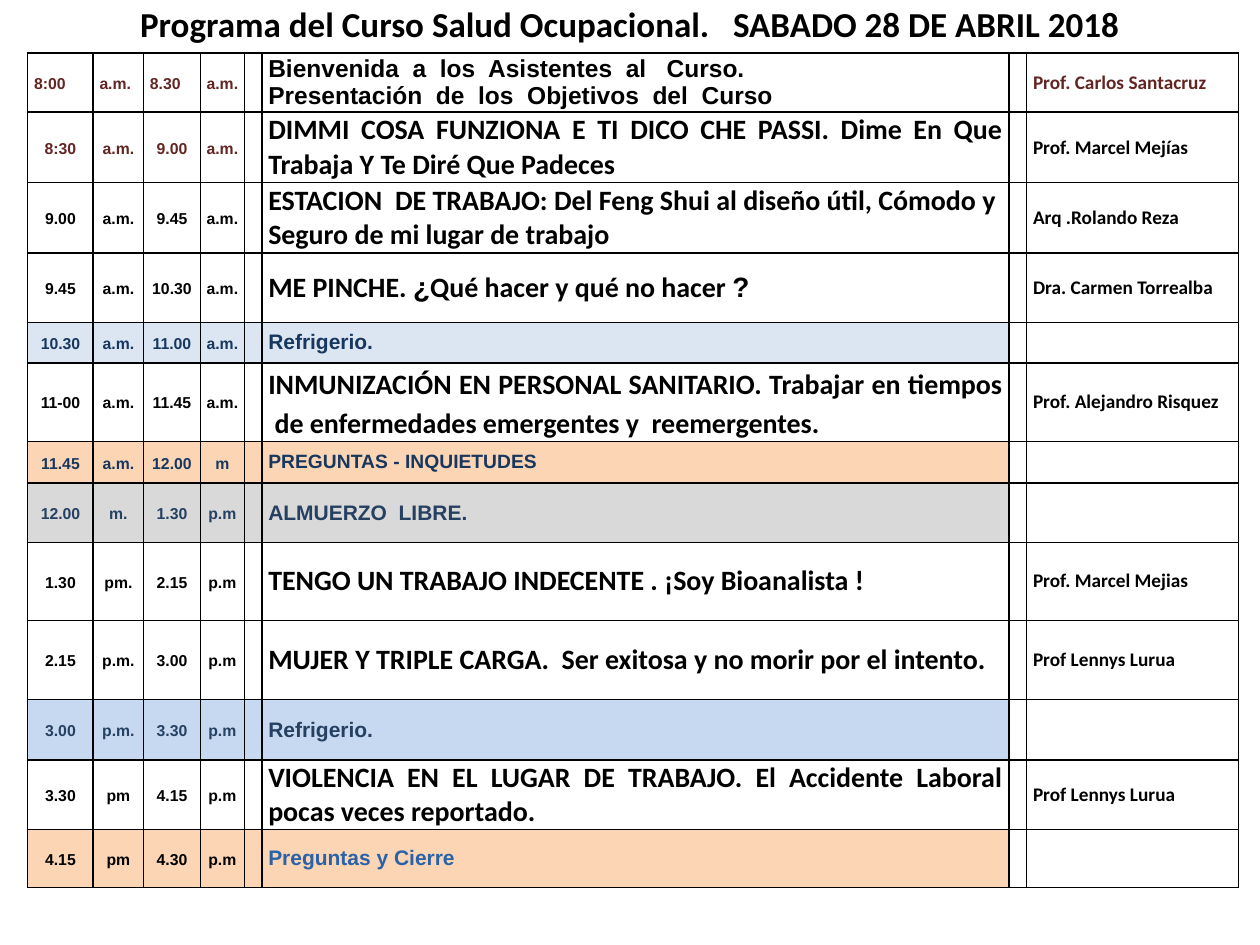
from lxml import etree
from pptx import Presentation
from pptx import util as u
from pptx.dml.color import RGBColor
from pptx.enum import text
from pptx.oxml.ns import qn

COLORS = {
    "black": "000000", "white": "FFFFFF", "maroon": "632523", "navy": "17375E",
    "slate": "254061", "blue": "2A62A8", "ice": "DCE6F2", "sky": "C6D9F1",
    "peach": "FCD5B5", "gray": "D9D9D9",
}
TITLE = "Programa del Curso Salud Ocupacional.   SABADO 28 DE ABRIL 2018"
COLUMNS = [0.52, 0.4, 0.45, 0.35, 0.12, 5.93, 0.12, 1.68]
TOPIC, SPEAKER = 5, 7
LEFT, CENTER, JUSTIFY = text.PP_ALIGN.LEFT, text.PP_ALIGN.CENTER, text.PP_ALIGN.JUSTIFY

# ponytail-free content: height, times, topic, speaker
SESSIONS = [
    (0.47, ("8:00", "a.m.", "8.30", "a.m."),
     "Bienvenida  a  los  Asistentes  al   Curso.\nPresentación  de  los  Objetivos  del  Curso",
     "Prof. Carlos Santacruz",
     dict(time="maroon", speaker="maroon", font="Arial", size=14, time_align=LEFT)),
    (0.56, ("8:30", "a.m.", "9.00", "a.m."),
     "DIMMI COSA FUNZIONA E TI DICO CHE PASSI. Dime En Que Trabaja Y Te Diré Que Padeces",
     "Prof. Marcel Mejías", dict(time="maroon", align=JUSTIFY)),
    (0.56, ("9.00", "a.m.", "9.45", "a.m."),
     "ESTACION  DE TRABAJO: Del Feng Shui al diseño útil, Cómodo y  Seguro de mi lugar de trabajo",
     "Arq .Rolando Reza", dict(align=JUSTIFY)),
    (0.55, ("9.45", "a.m.", "10.30", "a.m."),
     "ME PINCHE. ¿Qué hacer y qué no hacer ?", "Dra. Carmen Torrealba",
     dict(arial_marks="¿?")),
    (0.32, ("10.30", "a.m.", "11.00", "a.m."), "Refrigerio.", "",
     dict(time="navy", topic="navy", font="Arial", size=12, fill="ice")),
    (0.46, ("11-00", "a.m.", "11.45", "a.m."),
     "INMUNIZACIÓN EN PERSONAL SANITARIO. Trabajar en tiempos  de enfermedades emergentes y  reemergentes.",
     "Prof. Alejandro Risquez", dict(align=JUSTIFY, spacing=1.15)),
    (0.33, ("11.45", "a.m.", "12.00", "m"), "PREGUNTAS - INQUIETUDES", "",
     dict(time="navy", topic="navy", font="Arial", size=11, fill="peach")),
    (0.47, ("12.00", "m.", "1.30", "p.m"), "ALMUERZO  LIBRE.", "",
     dict(time="slate", topic="slate", font="Arial", size=12, fill="gray")),
    (0.62, ("1.30", "pm.", "2.15", "p.m"),
     "TENGO UN TRABAJO INDECENTE . ¡Soy Bioanalista !", "Prof. Marcel Mejias", {}),
    (0.63, ("2.15", "p.m.", "3.00", "p.m"),
     "MUJER Y TRIPLE CARGA.  Ser exitosa y no morir por el intento.", "Prof Lennys Lurua", {}),
    (0.48, ("3.00", "p.m.", "3.30", "p.m"), "Refrigerio.", "",
     dict(time="slate", topic="slate", font="Arial", size=12, fill="sky")),
    (0.55, ("3.30", "pm", "4.15", "p.m"),
     "VIOLENCIA EN EL LUGAR DE TRABAJO. El Accidente Laboral pocas veces reportado.",
     "Prof Lennys Lurua", dict(align=JUSTIFY)),
    (0.46, ("4.15", "pm", "4.30", "p.m"), "Preguntas y Cierre", "",
     dict(topic="blue", font="Arial", size=12, fill="peach")),
]


def color(name):
    return RGBColor.from_string(COLORS[name])


def format_paragraph(para, font, size, ink, align, spacing=None):
    para.alignment = align
    if spacing:
        para.line_spacing = spacing
    para.font.name, para.font.size, para.font.bold = font, u.Pt(size), True
    para.font.color.rgb = color(ink)


def prepare_cell(cell, fill):
    cell.margin_left = cell.margin_right = u.Inches(0.05)
    cell.margin_top = cell.margin_bottom = 0
    cell.vertical_anchor = text.MSO_ANCHOR.MIDDLE
    properties = cell._tc.get_or_add_tcPr()
    for side in ("lnL", "lnR", "lnT", "lnB"):
        line = etree.SubElement(properties, qn("a:" + side), w=str(u.Pt(1)))
        paint = etree.SubElement(line, qn("a:solidFill"))
        etree.SubElement(paint, qn("a:srgbClr"), val=COLORS["black"])
    cell.fill.solid()
    cell.fill.fore_color.rgb = color(fill)


def write_cell(cell, content, *style):
    cell.text = content
    for para in cell.text_frame.paragraphs:
        format_paragraph(para, *style)


def split_marks(para, marks):
    content = para.text
    para.clear()
    for mark in marks:
        before, content = content.split(mark, 1)
        para.add_run().text = before
        span = para.add_run()
        span.text, span.font.name = mark, "Arial"
    if content:
        para.add_run().text = content


def fill_row(table, index, session):
    height, times, topic, speaker, style = session
    table.rows[index].height = u.Inches(height)
    for column in range(len(COLUMNS)):
        tinted = column <= TOPIC
        prepare_cell(table.cell(index, column), style.get("fill", "white") if tinted else "white")
    for column, time in enumerate(times):
        write_cell(table.cell(index, column), time, "Arial", 9, style.get("time", "black"),
                   style.get("time_align", CENTER), 1.15)
    topic_cell = table.cell(index, TOPIC)
    write_cell(topic_cell, topic, style.get("font", "Calibri"), style.get("size", 16),
               style.get("topic", "black"), style.get("align", LEFT), style.get("spacing"))
    if "arial_marks" in style:
        split_marks(topic_cell.text_frame.paragraphs[0], style["arial_marks"])
    if speaker:
        write_cell(table.cell(index, SPEAKER), speaker, "Calibri", 11,
                   style.get("speaker", "black"), LEFT)


def main():
    """Build the one-page course programme."""
    deck = Presentation()
    deck.slide_width, deck.slide_height = u.Inches(10), u.Inches(7.5)
    page = deck.slides.add_slide(deck.slide_layouts[5])

    title = page.shapes.title
    title.left, title.top = 0, u.Inches(-0.03)
    title.width, title.height = u.Inches(10), u.Inches(0.44)
    title.text_frame.text = TITLE
    title.text_frame.vertical_anchor = text.MSO_ANCHOR.TOP
    format_paragraph(title.text_frame.paragraphs[0], "Calibri", 20, "black", CENTER)

    total = sum(session[0] for session in SESSIONS)
    table = page.shapes.add_table(len(SESSIONS), len(COLUMNS), u.Inches(0.22), u.Inches(0.42),
                                  u.Inches(sum(COLUMNS)), u.Inches(total)).table
    table.first_row = table.horz_banding = False
    for column, width in zip(table.columns, COLUMNS):
        column.width = u.Inches(width)
    for index, session in enumerate(SESSIONS):
        fill_row(table, index, session)
    deck.save("out.pptx")


if __name__ == "__main__":
    main()
